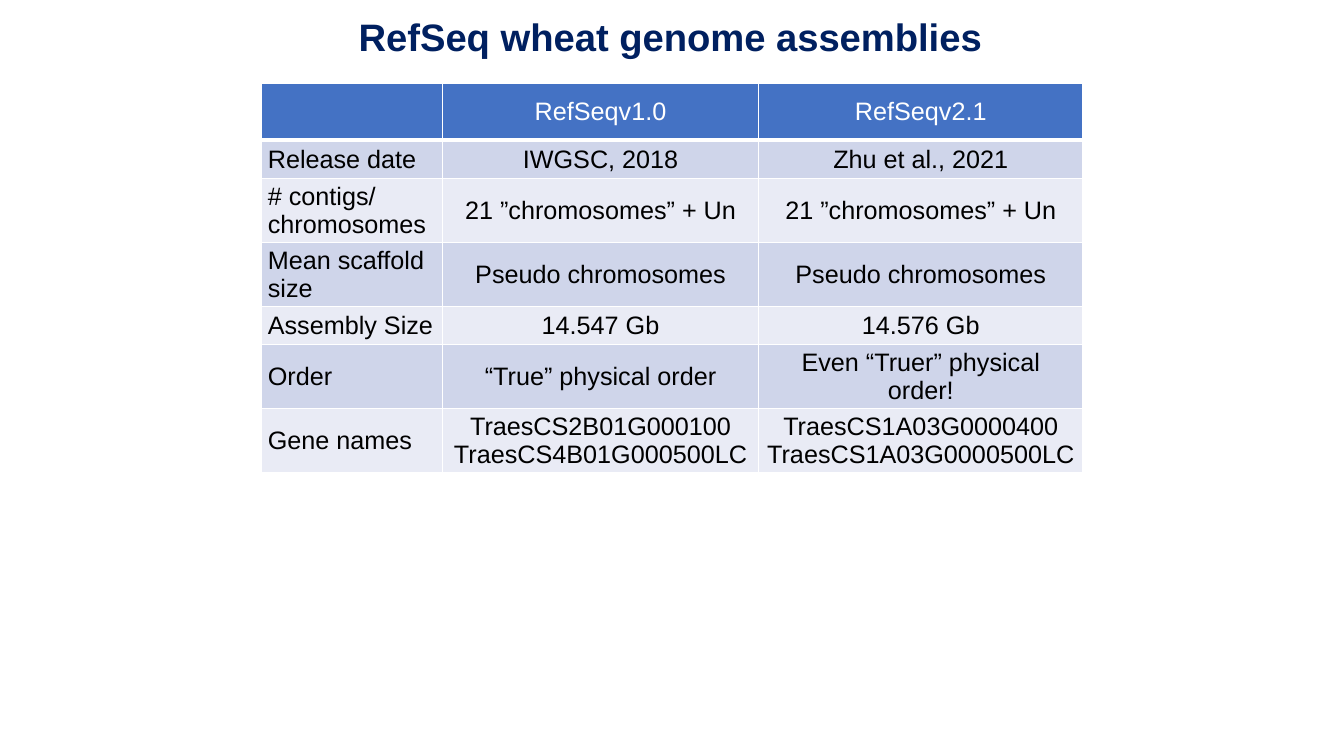
from lxml import etree
from pptx import Presentation
from pptx.dml.color import RGBColor
from pptx.enum.text import MSO_ANCHOR as Anchor, PP_ALIGN as Align
from pptx.oxml.ns import qn
from pptx.util import Cm, Pt

COLORS = {
    "title": "002060",
    "header": "4472C4",
    "band_dark": "CFD5EA",
    "band_light": "E9EBF5",
    "text": "000000",
    "white": "FFFFFF",
}


def add_run(paragraph, text, size, color, bold=False):
    run = paragraph.add_run()
    run.text = text
    run.font.name = "Arial"
    run.font.size = Pt(size)
    run.font.bold = bold
    run.font.color.rgb = RGBColor.from_string(COLORS[color])


def add_borders(cell, bottom_width):
    properties = cell._tc.get_or_add_tcPr()
    widths = {"a:lnL": 1, "a:lnR": 1, "a:lnT": 1, "a:lnB": bottom_width}
    for position, (tag, width) in enumerate(widths.items()):
        line = etree.Element(qn(tag), w=str(Pt(width)))
        fill = etree.SubElement(line, qn("a:solidFill"))
        etree.SubElement(fill, qn("a:srgbClr"), val=COLORS["white"])
        properties.insert(position, line)


presentation = Presentation()
presentation.slide_width = Cm(33.87)
presentation.slide_height = Cm(19.05)
slide = presentation.slides.add_slide(presentation.slide_layouts[6])

# Assembly table: each cell is a list of paragraphs
rows = [
    [[], ["RefSeqv1.0"], ["RefSeqv2.1"]],
    [["Release date"], ["IWGSC, 2018"], ["Zhu et al., 2021"]],
    [["# contigs/ chromosomes"], ["21 ”chromosomes” + Un"], ["21 ”chromosomes” + Un"]],
    [["Mean scaffold size"], ["Pseudo chromosomes"], ["Pseudo chromosomes"]],
    [["Assembly Size"], ["14.547 Gb"], ["14.576 Gb"]],
    [["Order"], ["“True” physical order"], ["Even “Truer” physical order!"]],
    [
        ["Gene names"],
        ["TraesCS2B01G000100", "TraesCS4B01G000500LC"],
        ["TraesCS1A03G0000400", "TraesCS1A03G0000500LC"],
    ],
]
column_widths = [4.57, 7.97, 8.17]
row_heights = [1.42, 0.97, 1.61, 1.61, 0.97, 1.61, 1.61]

table = slide.shapes.add_table(
    len(rows), len(column_widths), Cm(6.58), Cm(2.11),
    Cm(sum(column_widths)), Cm(sum(row_heights)),
).table
for column, width in zip(table.columns, column_widths):
    column.width = Cm(width)

for row_index, (row, height) in enumerate(zip(rows, row_heights)):
    table.rows[row_index].height = Cm(height)
    is_header = row_index == 0
    band = "header" if is_header else "band_dark" if row_index % 2 else "band_light"
    for column_index, lines in enumerate(row):
        cell = table.cell(row_index, column_index)
        cell.fill.solid()
        cell.fill.fore_color.rgb = RGBColor.from_string(COLORS[band])
        add_borders(cell, 3 if is_header else 1)
        cell.vertical_anchor = Anchor.MIDDLE
        cell.margin_left = cell.margin_right = Cm(0.17)
        cell.margin_top = cell.margin_bottom = Cm(0.09)
        for line_index, text in enumerate(lines):
            frame = cell.text_frame
            paragraph = frame.add_paragraph() if line_index else frame.paragraphs[0]
            paragraph.alignment = Align.CENTER if column_index else Align.LEFT
            add_run(paragraph, text, 18, "white" if is_header else "text")

# Title
title = slide.shapes.add_textbox(Cm(8.79), Cm(0.41), Cm(16.28), Cm(1.22))
title.text_frame.word_wrap = True
title.text_frame.vertical_anchor = Anchor.MIDDLE
paragraph = title.text_frame.paragraphs[0]
paragraph.line_spacing = 0.8
add_run(paragraph, "RefSeq wheat genome assemblies", 27.3, "title", bold=True)

presentation.save("out.pptx")
